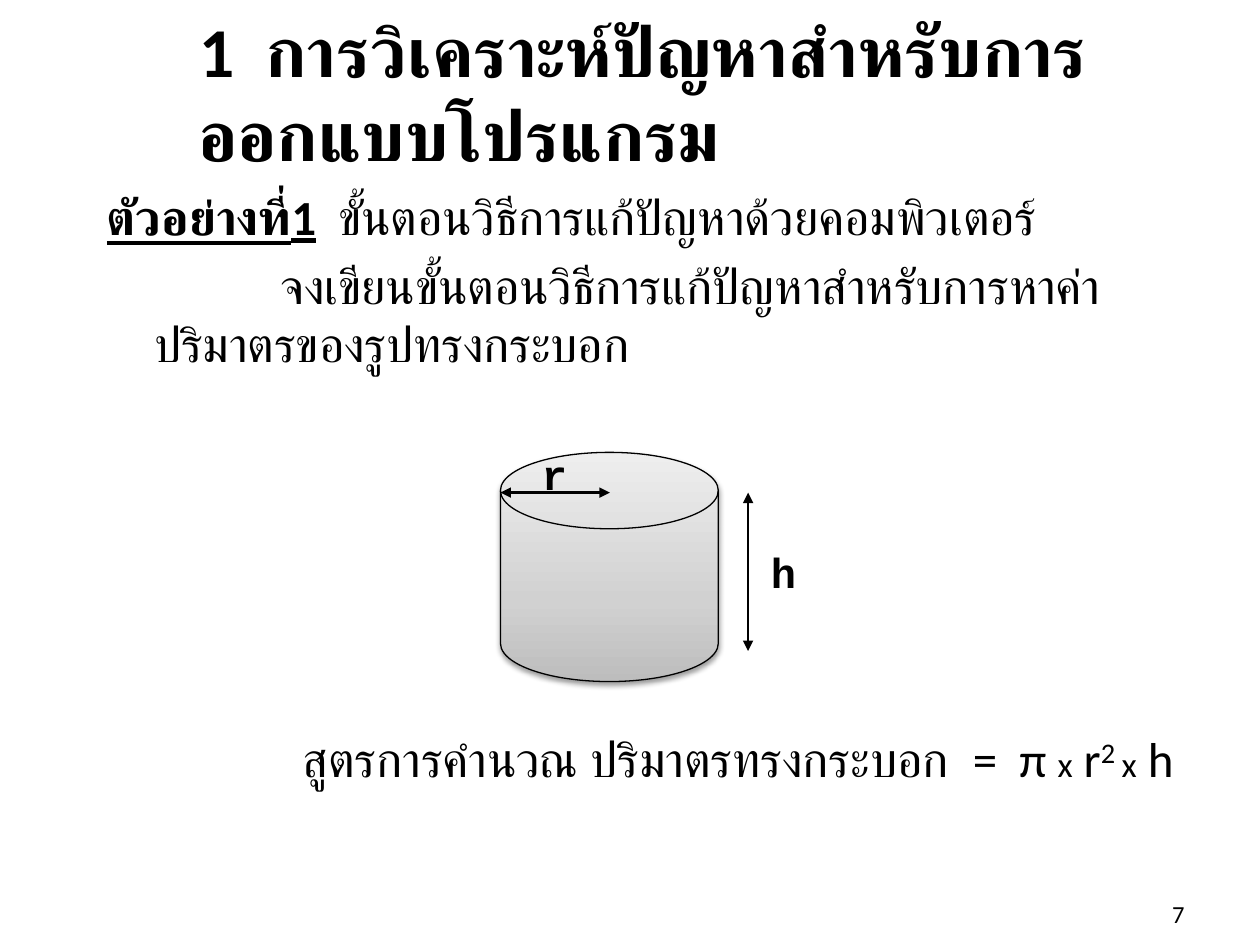
"""Build the slide on finding the volume of a cylinder."""
from dataclasses import dataclass

from lxml.etree import SubElement
from pptx import Presentation
from pptx.dml.color import RGBColor
from pptx.enum.shapes import MSO_CONNECTOR, MSO_SHAPE
from pptx.enum.text import MSO_ANCHOR, PP_ALIGN
from pptx.oxml.ns import qn
from pptx.util import Pt


@dataclass(frozen=True)
class Theme:
    ink: str = "000000"
    gradient: tuple = ((0, "BDBDBD"), (35, "D1D1D1"), (100, "EEEEEE"))
    font: str = "Calibri"
    label_font: str = "Courier New"
    title_size: int = 40
    body_size: int = 28
    label_size: int = 24
    times_size: int = 20
    number_size: int = 14


THEME = Theme()


def add_text(paragraph, text, size=THEME.body_size, font=THEME.font, bold=False, underline=False, baseline=0):
    run = paragraph.add_run()
    run.text = text
    run.font.size = Pt(size)
    run.font.name = font
    run.font.bold = bold
    run.font.underline = underline
    run.font.color.rgb = RGBColor.from_string(THEME.ink)
    if baseline:
        run.font._element.set("baseline", str(baseline * 1000))


def add_colour(parent, colour):
    return SubElement(parent, qn("a:srgbClr"), val=colour)


class SlideBuilder:
    def __init__(self, slide, theme):
        self.slide = slide
        self.theme = theme

    def text_box(self, left, top, width, height, anchor=MSO_ANCHOR.TOP, wrap=True):
        box = self.slide.shapes.add_textbox(Pt(left), Pt(top), Pt(width), Pt(height))
        frame = box.text_frame
        frame.word_wrap = wrap
        frame.vertical_anchor = anchor
        return frame

    def label(self, text, left, top):
        frame = self.text_box(left, top, 28.8, 36, wrap=False)
        add_text(frame.paragraphs[0], text, size=self.theme.label_size, font=self.theme.label_font, bold=True)

    def outline(self, shape, width):
        shape.line.color.rgb = RGBColor.from_string(self.theme.ink)
        shape.line.width = Pt(width)

    def cylinder(self, left, top, width, height):
        shape = self.slide.shapes.add_shape(
            MSO_SHAPE.FLOWCHART_MAGNETIC_DISK, Pt(left), Pt(top), Pt(width), Pt(height))
        properties = shape._element.spPr
        gradient = SubElement(properties, qn("a:gradFill"), rotWithShape="1")
        stops = SubElement(gradient, qn("a:gsLst"))
        for position, colour in self.theme.gradient:
            add_colour(SubElement(stops, qn("a:gs"), pos=str(position * 1000)), colour)
        SubElement(gradient, qn("a:lin"), ang="16200000", scaled="0")
        self.outline(shape, 0.75)
        shape.shadow.inherit = False
        shadow = SubElement(
            properties.find(qn("a:effectLst")), qn("a:outerShdw"),
            blurRad=str(Pt(3.1)), dist=str(Pt(1.6)), dir="5400000", rotWithShape="0")
        SubElement(add_colour(shadow, self.theme.ink), qn("a:alpha"), val="38000")

    def double_arrow(self, start_x, start_y, end_x, end_y):
        arrow = self.slide.shapes.add_connector(
            MSO_CONNECTOR.STRAIGHT, Pt(start_x), Pt(start_y), Pt(end_x), Pt(end_y))
        self.outline(arrow, 1.5)
        line = arrow.line._get_or_add_ln()
        for end in ("a:headEnd", "a:tailEnd"):
            SubElement(line, qn(end), type="triangle")
        SubElement(arrow._element.spPr, qn("a:effectLst"))


def indent(paragraph, left, first):
    properties = paragraph._p.get_or_add_pPr()
    properties.set("marL", str(Pt(left)))
    properties.set("indent", str(Pt(first)))


def main():
    presentation = Presentation()
    presentation.slide_width, presentation.slide_height = Pt(720), Pt(540)
    slide = presentation.slides.add_slide(presentation.slide_layouts[6])
    builder = SlideBuilder(slide, THEME)

    title = builder.text_box(106.5, 7, 613.5, 90, anchor=MSO_ANCHOR.MIDDLE)
    add_text(title.paragraphs[0], "1  การวิเคราะห์ปัญหาสำหรับการออกแบบโปรแกรม", size=THEME.title_size, bold=True)

    body = builder.text_box(54, 103, 641, 120)
    heading = body.paragraphs[0]
    indent(heading, 27, -27)
    add_text(heading, "ตัวอย่างที่1", bold=True, underline=True)
    add_text(heading, "  ขั้นตอนวิธีการแก้ปัญหาด้วยคอมพิวเตอร์")
    task = body.add_paragraph()
    indent(task, 27, 72)
    task.space_before = Pt(5.6)
    add_text(task, "จงเขียนขั้นตอนวิธีการแก้ปัญหาสำหรับการหาค่าปริมาตรของรูปทรงกระบอก")

    builder.cylinder(286, 258.5, 124.5, 131)
    builder.double_arrow(348.5, 281.5, 286, 281.5)
    builder.double_arrow(427.5, 281.5, 427.5, 372)
    builder.label("h", 433.5, 309)
    builder.label("r", 302.5, 252.5)

    formula = builder.text_box(166, 413, 529, 48).paragraphs[0]
    add_text(formula, "สูตรการคำนวณ ปริมาตรทรงกระบอก  =  π ")
    add_text(formula, "x", size=THEME.times_size)
    add_text(formula, " r")
    add_text(formula, "2 ", baseline=30)
    add_text(formula, "x", size=THEME.times_size)
    add_text(formula, " h")

    number = builder.text_box(534, 498, 150, 36, anchor=MSO_ANCHOR.BOTTOM).paragraphs[0]
    number.alignment = PP_ALIGN.RIGHT
    add_text(number, "7", size=THEME.number_size)

    presentation.save("out.pptx")


if __name__ == "__main__":
    main()
